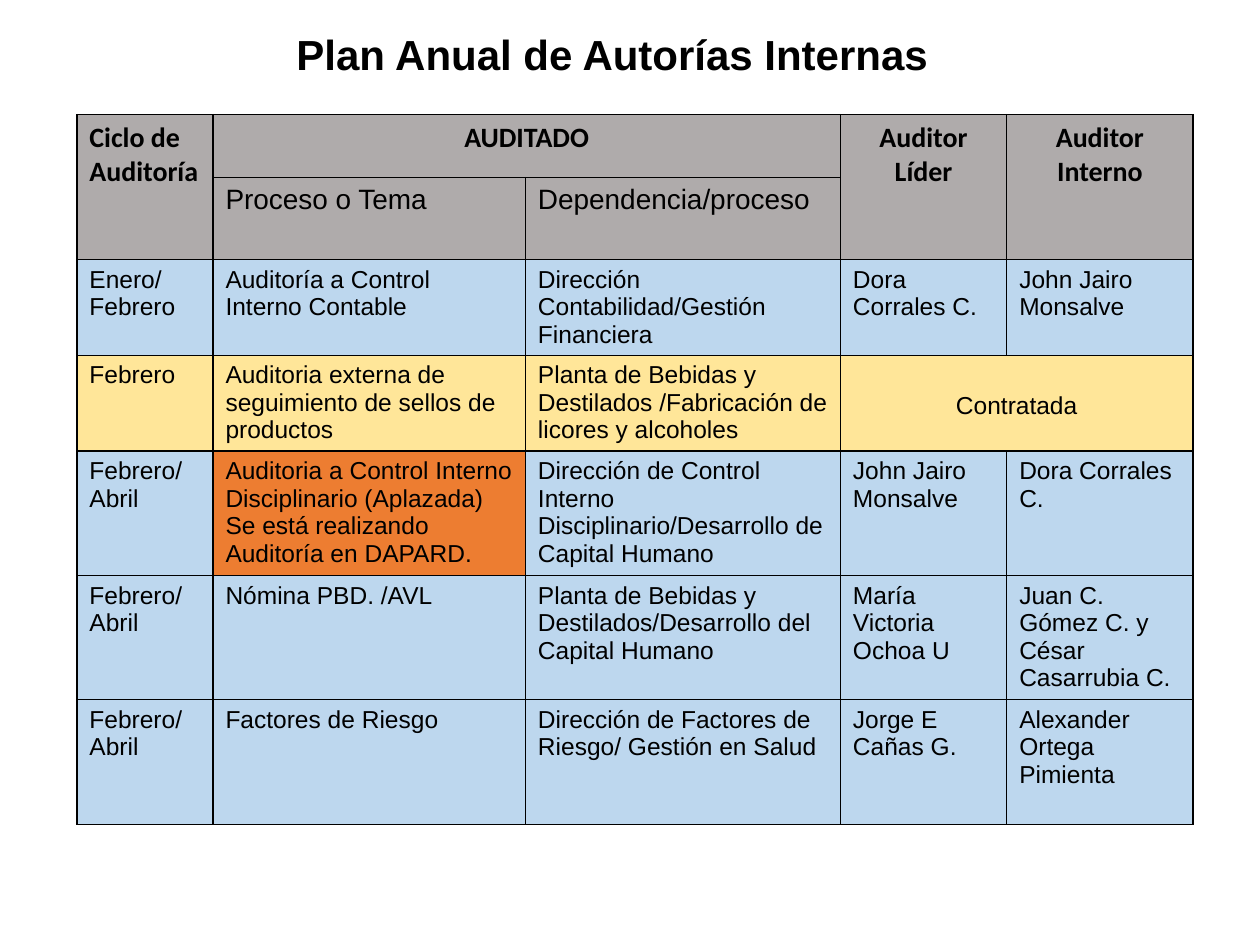
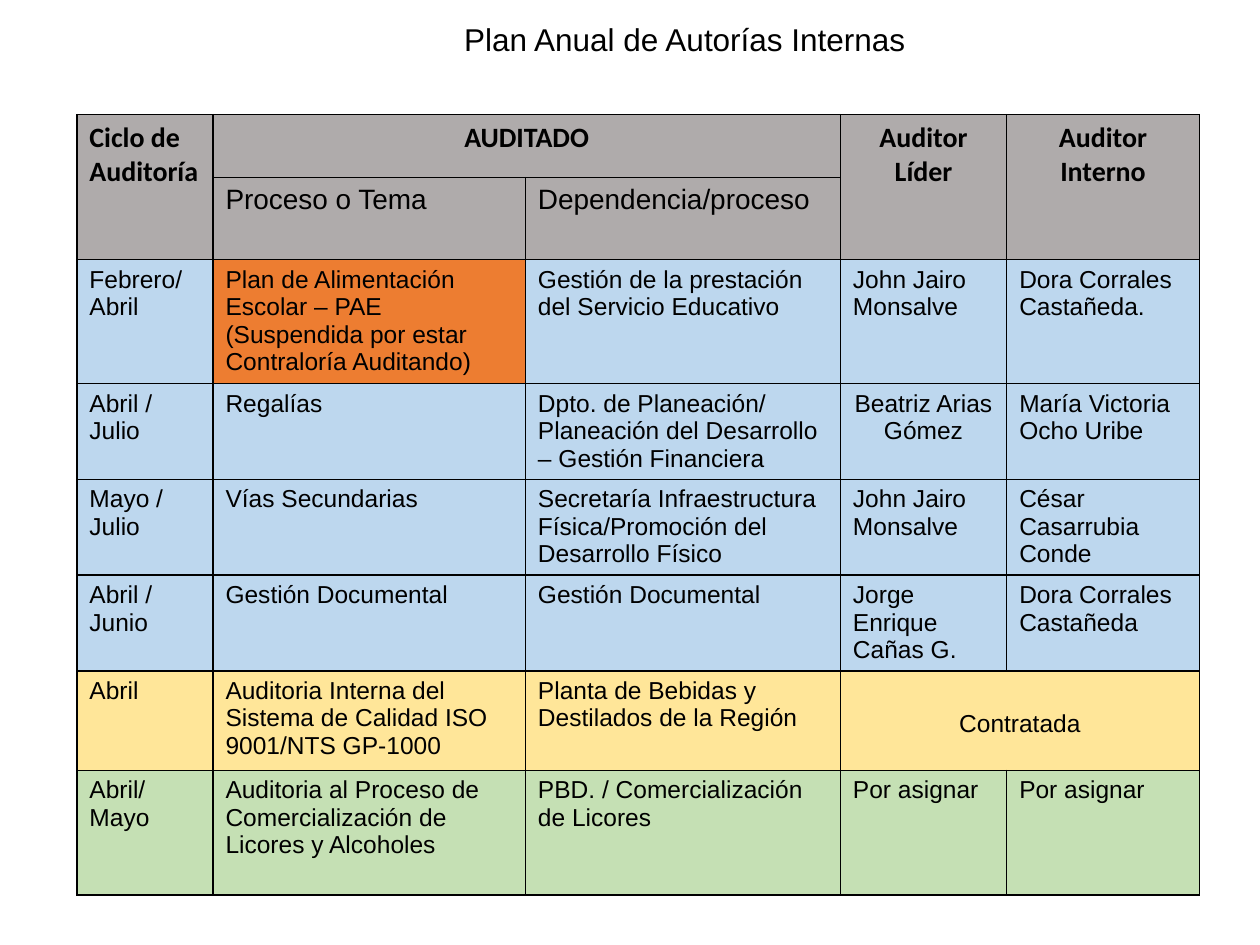
from dataclasses import dataclass

from lxml import etree
from pptx import Presentation, util as u
from pptx.dml.color import RGBColor
from pptx.enum import text as t
from pptx.oxml import ns

# Shared look: a grid of 100 columns by 75 rows
GRID = u.Inches(0.1)
COLOURS = {
    "ink": "000000",
    "header": "AFABAB",
    "planned": "BDD7EE",
    "contracted": "FFE699",
    "stopped": "ED7D31",
    "unassigned": "C5E0B4",
}
TITLE = "Plan Anual de Autorías Internas"
HEADER_HEIGHTS = (5, 6.5)
LEFT, CENTRE = t.PP_ALIGN.LEFT, t.PP_ALIGN.CENTER


@dataclass
class Audit:
    height: float
    cells: tuple
    status: str = "planned"
    stopped: bool = False
    lead_centred: bool = False


FIRST_AUDITS = [
    Audit(7.6, ("Enero/ Febrero", "Auditoría a Control Interno Contable",
                "Dirección Contabilidad/Gestión Financiera",
                "Dora Corrales C.", "John Jairo Monsalve")),
    Audit(7.6, ("Febrero", "Auditoria externa de seguimiento de sellos de productos",
                "Planta de Bebidas y Destilados /Fabricación de licores y alcoholes",
                "Contratada"), "contracted"),
    Audit(9.9, ("Febrero/ Abril",
                "Auditoria a Control Interno Disciplinario (Aplazada)\n"
                "Se está realizando Auditoría en DAPARD.",
                "Dirección de Control Interno Disciplinario/Desarrollo de Capital Humano",
                "John Jairo Monsalve", "Dora Corrales C."), stopped=True),
    Audit(9.7, ("Febrero/ Abril", "Nómina PBD. /AVL",
                "Planta de Bebidas y Destilados/Desarrollo del Capital Humano",
                "María Victoria Ochoa U", "Juan C. Gómez C. y César Casarrubia C.")),
    Audit(9.9, ("Febrero/ Abril", "Factores de Riesgo",
                "Dirección de Factores de Riesgo/ Gestión en Salud",
                "Jorge E Cañas G.", "Alexander Ortega Pimienta")),
]
SECOND_AUDITS = [
    Audit(9.7, ("Febrero/ Abril",
                "Plan de Alimentación Escolar – PAE (Suspendida por estar Contraloría Auditando)",
                "Gestión de la prestación del Servicio Educativo",
                "John Jairo Monsalve", "Dora Corrales Castañeda."), stopped=True),
    Audit(7.6, ("Abril / Julio", "Regalías",
                "Dpto. de Planeación/ Planeación del Desarrollo – Gestión Financiera",
                "Beatriz Arias Gómez", "María Victoria Ocho Uribe"), lead_centred=True),
    Audit(7.6, ("Mayo / Julio", "Vías Secundarias",
                "Secretaría Infraestructura Física/Promoción del Desarrollo Físico",
                "John Jairo Monsalve", "César Casarrubia Conde")),
    Audit(7.6, ("Abril / Junio", "Gestión Documental", "Gestión Documental",
                "Jorge Enrique Cañas G.", "Dora Corrales Castañeda")),
    Audit(7.9, ("Abril", "Auditoria Interna del Sistema de Calidad ISO 9001/NTS GP-1000",
                "Planta de Bebidas y Destilados de la Región", "Contratada"), "contracted"),
    Audit(9.9, ("Abril/\nMayo",
                "Auditoria al Proceso de Comercialización de Licores y Alcoholes",
                "PBD. / Comercialización de Licores", "Por asignar", "Por asignar"),
          "unassigned"),
]


def grid(steps):
    return round(steps * GRID)


def write(frame, wording, size, bold=False, font="Arial", align=LEFT):
    frame.text = wording
    for paragraph in frame.paragraphs:
        paragraph.alignment = align
        for run in paragraph.runs:
            run.font.size, run.font.bold, run.font.name = u.Pt(size), bold, font
            run.font.color.rgb = RGBColor.from_string(COLOURS["ink"])


def paint(cell, colour):
    """Give a cell its black borders, then its fill."""
    properties = cell._tc.get_or_add_tcPr()
    for side in ("lnL", "lnR", "lnT", "lnB"):
        border = etree.SubElement(properties, ns.qn(f"a:{side}"), w=str(u.Pt(1)))
        fill = etree.SubElement(border, ns.qn("a:solidFill"))
        etree.SubElement(fill, ns.qn("a:srgbClr"), val=COLOURS["ink"])
    cell.fill.solid()
    cell.fill.fore_color.rgb = RGBColor.from_string(COLOURS[colour])


def add_title(slide, box, size, bold=False, anchor=t.MSO_ANCHOR.TOP, spacing=1.0):
    frame = slide.shapes.add_textbox(*map(grid, box)).text_frame
    frame.word_wrap = True
    frame.vertical_anchor = anchor
    write(frame, TITLE, size, bold, align=CENTRE)
    frame.paragraphs[0].line_spacing = spacing


def fill_header(plan):
    for row in range(2):
        for column in range(5):
            paint(plan.cell(row, column), "header")
    for column in (0, 3, 4):
        plan.cell(0, column).merge(plan.cell(1, column))
    plan.cell(0, 1).merge(plan.cell(0, 2))
    headings = {0: "Ciclo de Auditoría", 1: "AUDITADO", 3: "Auditor Líder", 4: "Auditor Interno"}
    for column, heading in headings.items():
        write(plan.cell(0, column).text_frame, heading, 16, True, "Calibri",
              CENTRE if column else LEFT)
    for column, heading in enumerate(("Proceso o Tema", "Dependencia/proceso"), 1):
        write(plan.cell(1, column).text_frame, heading, 16)


def fill_audit(plan, row, audit):
    contracted = audit.status == "contracted"
    for column in range(5):
        stopped = audit.stopped and column == 1
        paint(plan.cell(row, column), "stopped" if stopped else audit.status)
        plan.cell(row, column).margin_bottom = 0  # keeps the row at its set height
    for column, wording in enumerate(audit.cells):
        centred = column == 3 and (contracted or audit.lead_centred)
        write(plan.cell(row, column).text_frame, wording, 14,
              align=CENTRE if centred else LEFT)
    if contracted:
        plan.cell(row, 3).merge(plan.cell(row, 4))
        plan.cell(row, 3).vertical_anchor = t.MSO_ANCHOR.MIDDLE


def add_plan(slide, left, top, intern_width, audits):
    widths = (10.8, 24.8, 25, 13.2, intern_width)
    heights = [*HEADER_HEIGHTS, *(audit.height for audit in audits)]
    plan = slide.shapes.add_table(
        len(heights), len(widths), grid(left), grid(top),
        grid(sum(widths)), grid(sum(heights))).table
    plan.first_row = plan.horz_banding = False
    for column, width in zip(plan.columns, widths):
        column.width = grid(width)
    for row, height in zip(plan.rows, heights):
        row.height = grid(height)
    fill_header(plan)
    for row, audit in enumerate(audits, len(HEADER_HEIGHTS)):
        fill_audit(plan, row, audit)


def main():
    deck = Presentation()
    deck.slide_width, deck.slide_height = grid(100), grid(75)
    blank = deck.slide_layouts[6]

    # First part of the yearly plan
    opening = deck.slides.add_slide(blank)
    add_title(opening, (6.1, 0.3, 85, 6.5), 24, True, t.MSO_ANCHOR.BOTTOM, 0.9)
    add_plan(opening, 6.1, 9.1, 14.8, FIRST_AUDITS)

    # Second part of the yearly plan
    continuation = deck.slides.add_slide(blank)
    add_plan(continuation, 6.1, 9.1, 15.3, SECOND_AUDITS)
    add_title(continuation, (22.6, 1.1, 63.5, 4), 18)

    deck.save("out.pptx")


if __name__ == "__main__":
    main()
